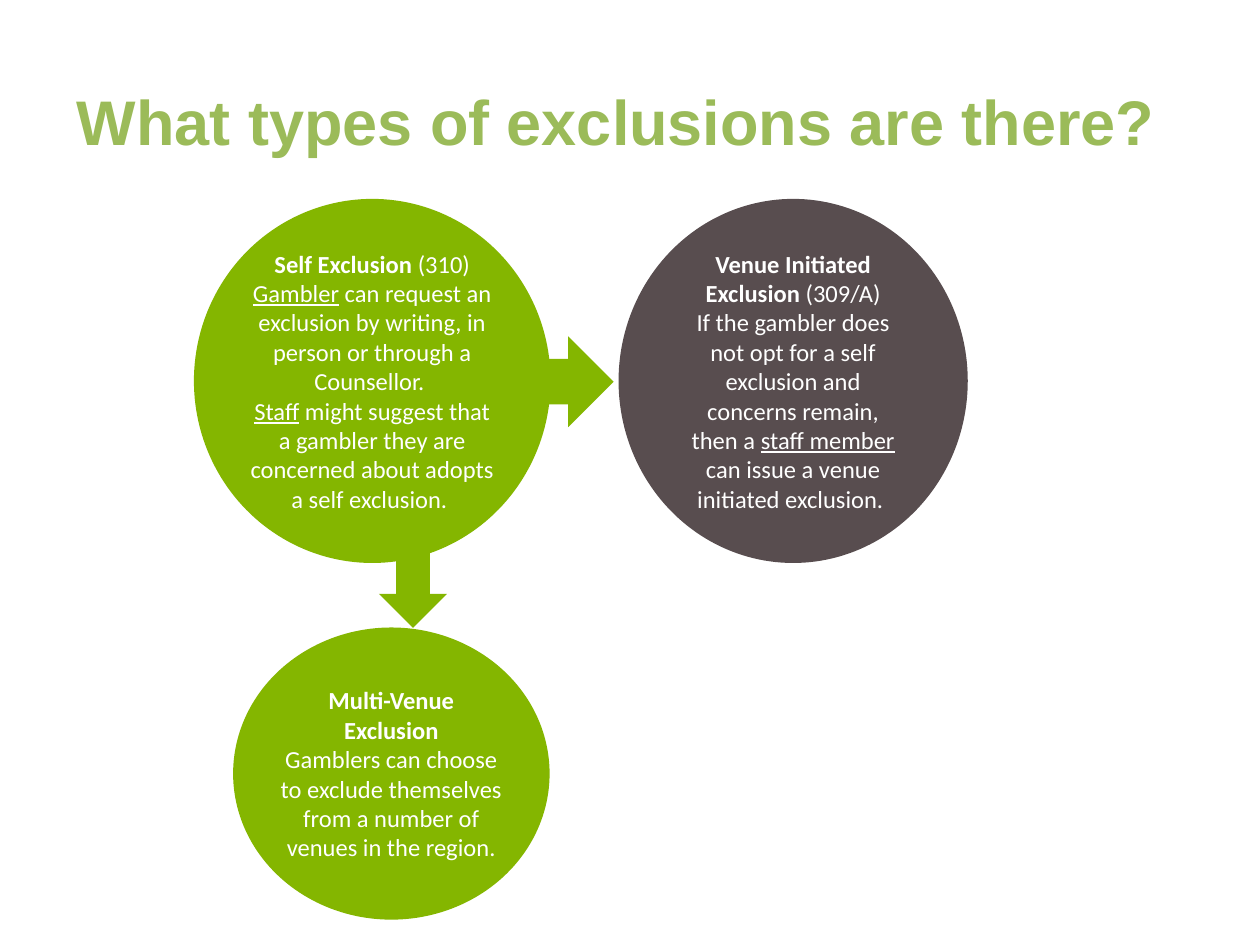
from pptx import Presentation
from pptx.dml.color import RGBColor
from pptx.enum.shapes import MSO_SHAPE
from pptx.enum.text import MSO_ANCHOR, PP_ALIGN
from pptx.util import Cm, Pt

OVAL, ARROW = MSO_SHAPE.OVAL, MSO_SHAPE.RIGHT_ARROW
MIDDLE, CENTER = MSO_ANCHOR.MIDDLE, PP_ALIGN.CENTER
GREEN = RGBColor(0x84, 0xB6, 0x00)
GREY = RGBColor(0x58, 0x4D, 0x4F)
TITLE_GREEN = RGBColor(0x9B, 0xBB, 0x59)
WHITE = RGBColor(0xFF, 0xFF, 0xFF)

TITLE = "What types of exclusions are there?"
PLAIN, BOLD, UNDERLINE = "plain", "bold", "underline"

ARROWS = [
    ((6.99, 10.64, 2.67, 1.37), 90),
    ((10.36, 6.78, 2.01, 1.83), 0),
]

EXCLUSIONS = [
    ((3.91, 4.01, 7.19, 7.34), GREEN, (0, 0), [
        [("Self Exclusion ", BOLD), ("(310)", PLAIN)],
        [("Gambler", UNDERLINE),
         (" can request an exclusion by writing, in person or through a Counsellor. ", PLAIN)],
        [("Staff", UNDERLINE),
         (" might suggest that a gambler they are concerned about adopts a self exclusion. ", PLAIN)],
    ]),
    ((12.47, 4.01, 7.04, 7.34), GREY, (0.25, 0.13), [
        [("Venue Initiated Exclusion ", BOLD), ("(309/A)", PLAIN)],
        [("If the gambler does not opt for a self exclusion and concerns remain, then a ", PLAIN),
         ("staff member ", UNDERLINE),
         ("can issue a venue initiated exclusion. ", PLAIN)],
    ]),
    ((4.7, 12.65, 6.38, 5.89), GREEN, (0, 0), [
        [("Multi-Venue Exclusion", BOLD)],
        [("Gamblers can choose to exclude themselves from a number of venues in the region.", PLAIN)],
    ]),
]


def add_solid(slide, kind, box, color):
    solid = slide.shapes.add_shape(kind, *map(Cm, box))
    solid.shadow.inherit = False
    solid.fill.solid()
    solid.fill.fore_color.rgb = color
    solid.line.fill.background()
    return solid


def style(run, font_name, size, color, look):
    run.font.name = font_name
    run.font.size = Pt(size)
    run.font.color.rgb = color
    run.font.bold = look == BOLD
    run.font.underline = look == UNDERLINE


def write_paragraphs(frame, paragraphs, margins):
    frame.word_wrap = True
    frame.vertical_anchor = MIDDLE
    frame.margin_left = frame.margin_right = Cm(margins[0])
    frame.margin_top = frame.margin_bottom = Cm(margins[1])
    for index, parts in enumerate(paragraphs):
        paragraph = frame.paragraphs[0] if index == 0 else frame.add_paragraph()
        paragraph.alignment = CENTER
        for words, look in parts:
            run = paragraph.add_run()
            run.text = words
            style(run, "Calibri", 14, WHITE, look)


def main():
    deck = Presentation()
    deck.slide_width, deck.slide_height = Cm(25.4), Cm(19.05)
    slide = deck.slides.add_slide(deck.slide_layouts[6])

    for box, rotation in ARROWS:
        add_solid(slide, ARROW, box, GREEN).rotation = rotation

    heading = slide.shapes.add_textbox(Cm(1.3), Cm(0.84), Cm(22.86), Cm(3.18)).text_frame
    heading.word_wrap = True
    heading.vertical_anchor = MIDDLE
    heading.text = TITLE
    style(heading.paragraphs[0].runs[0], "Arial", 36, TITLE_GREEN, BOLD)

    for box, color, margins, paragraphs in EXCLUSIONS:
        circle = add_solid(slide, OVAL, box, color)
        write_paragraphs(circle.text_frame, paragraphs, margins)

    deck.save("out.pptx")


if __name__ == "__main__":
    main()
